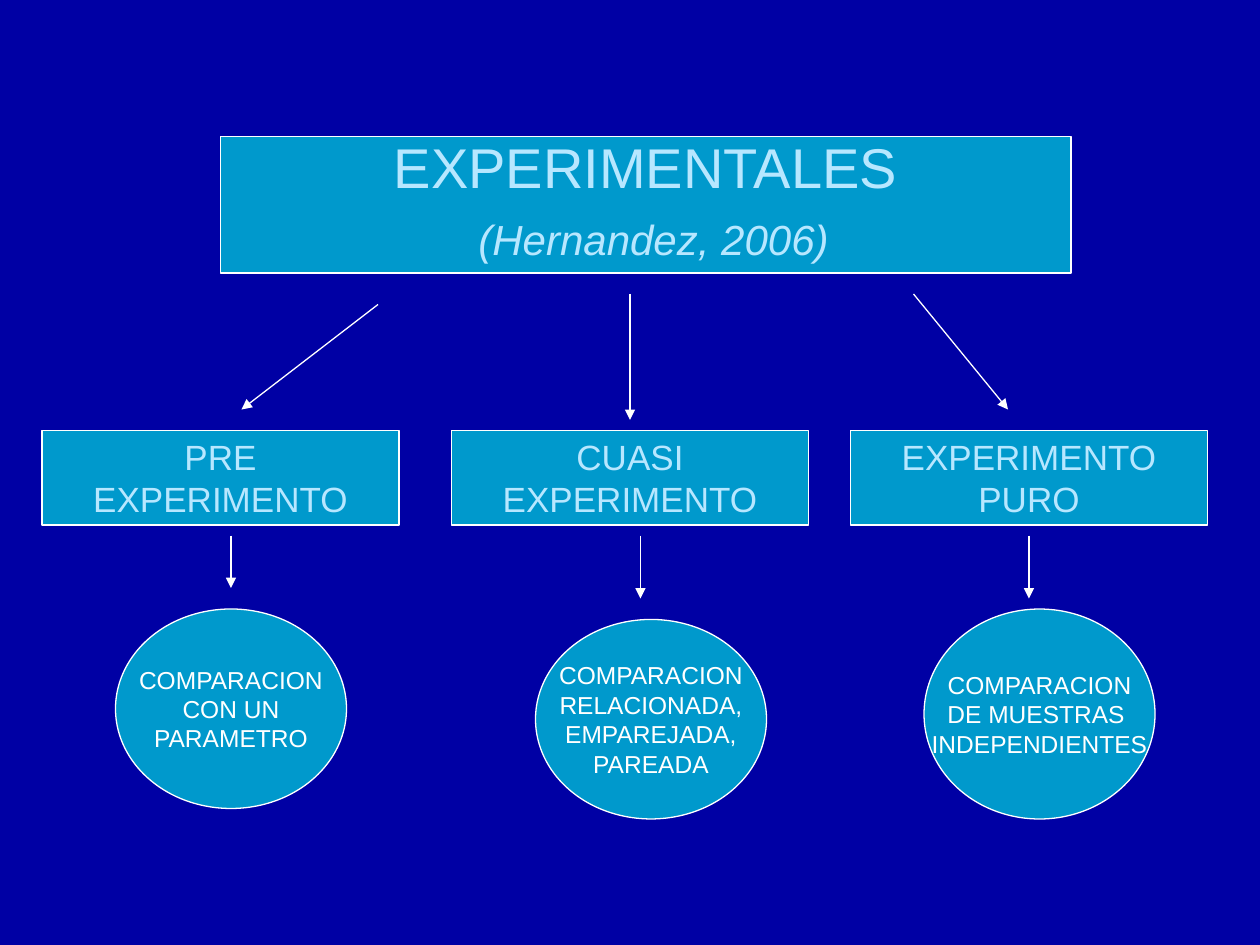
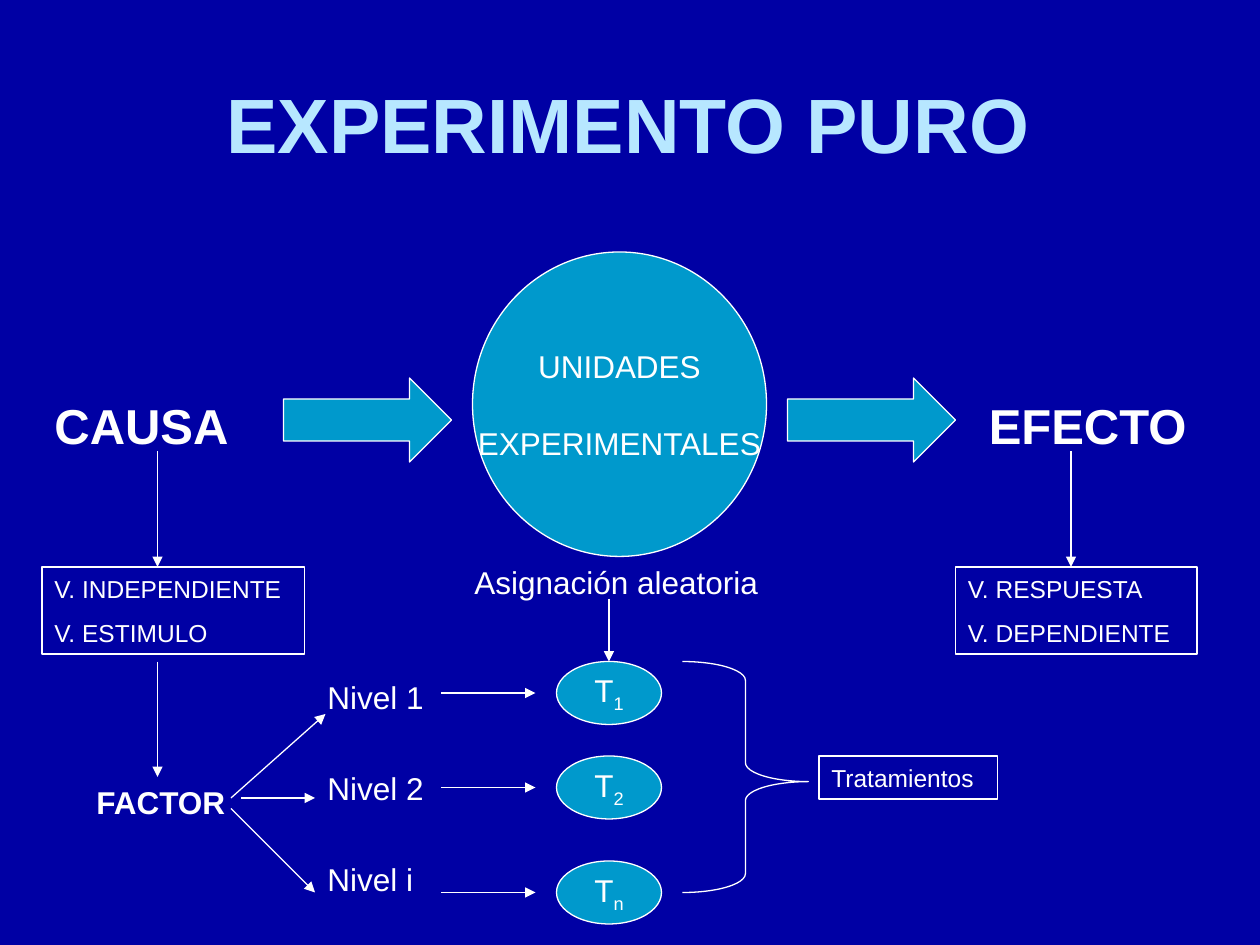
from lxml.etree import SubElement
from pptx import Presentation
from pptx.dml.color import RGBColor
from pptx.enum.shapes import MSO_CONNECTOR, MSO_SHAPE
from pptx.enum.text import MSO_ANCHOR, PP_ALIGN
from pptx.oxml.ns import qn
from pptx.util import Inches, Pt

COLORS = {"back": "0000A4", "fill": "0099CC", "white": "FFFFFF", "title": "B7E7FF"}
COLS, ROWS = 120, 90
WIDTH, HEIGHT = Inches(10), Inches(7.5)
MIDDLE = {"align": PP_ALIGN.CENTER, "anchor": MSO_ANCHOR.MIDDLE}
HEADING = {**MIDDLE, "color": "title"}
BUBBLE = {**MIDDLE, "wrap": False}
LIST = {"size": 14, "gap": 8, "fill": None, "anchor": MSO_ANCHOR.MIDDLE}


class Deck:
    """Draws styled elements on the current slide, placed on a 120 by 90 grid."""

    def __init__(self):
        self.prs = Presentation()
        self.prs.slide_width, self.prs.slide_height = WIDTH, HEIGHT
        self.s = None

    def color(self, name):
        return RGBColor.from_string(COLORS[name])

    def place(self, *at):
        return [int(v * (HEIGHT / ROWS if i % 2 else WIDTH / COLS)) for i, v in enumerate(at)]

    def slide(self):
        self.s = self.prs.slides.add_slide(self.prs.slide_layouts[6])
        fill = self.s.background.fill
        fill.solid()
        fill.fore_color.rgb = self.color("back")

    def outline(self, sp):
        sp.line.color.rgb = self.color("white")
        sp.line.width = Pt(0.75)

    def put_text(self, sp, paras, size=18, color="white", align=PP_ALIGN.LEFT,
                 anchor=MSO_ANCHOR.TOP, wrap=True, gap=0, bold=False):
        tf = sp.text_frame
        tf.word_wrap, tf.vertical_anchor = wrap, anchor
        for i, runs in enumerate(paras):
            p = tf.add_paragraph() if i else tf.paragraphs[0]
            p.alignment, p.space_before = align, Pt(gap if i else 0)
            for text, extra in [(runs, {})] if isinstance(runs, str) else runs:
                self.put_runs(p, text, color,
                              {"name": "Arial", "size": Pt(size), "bold": bold, **extra})

    def put_runs(self, p, text, color, form):
        for i, line in enumerate(text.split("\n")):
            if i:
                p.add_line_break()
            r = p.add_run()
            r.text = line
            r.font.color.rgb = self.color(color)
            for key, value in form.items():
                if key == "baseline":
                    r._r.get_or_add_rPr().set(key, value)
                else:
                    setattr(r.font, key, value)

    def shape(self, kind, at, paras=(), fill="fill", adjust=(), **form):
        sp = self.s.shapes.add_shape(kind, *self.place(*at))
        sp.shadow.inherit = False
        for i, value in enumerate(adjust):
            sp.adjustments[i] = value
        if fill:
            sp.fill.solid()
            sp.fill.fore_color.rgb = self.color(fill)
        else:
            sp.fill.background()
        self.outline(sp)
        if paras:
            self.put_text(sp, paras, **form)

    def text(self, at, paras, **form):
        self.put_text(self.s.shapes.add_textbox(*self.place(*at)), paras, **form)

    def arrow(self, *ends):
        sp = self.s.shapes.add_connector(MSO_CONNECTOR.STRAIGHT, *self.place(*ends))
        self.outline(sp)
        SubElement(sp.line._get_or_add_ln(), qn("a:tailEnd"), type="triangle")
        SubElement(sp._element.spPr, qn("a:effectLst"))


def designs(deck):
    """Draws the tree of experimental designs."""
    deck.slide()
    heading = [("EXPERIMENTALES\n ", {}), ("(Hernandez, 2006)", {"size": Pt(24), "italic": True})]
    deck.shape(MSO_SHAPE.RECTANGLE, (21, 13, 81, 13), [heading], size=32,
               **{**HEADING, "anchor": MSO_ANCHOR.BOTTOM})
    for ends in ((60, 28, 60, 40), (36, 29, 23, 39), (87, 28, 96, 39)):
        deck.arrow(*ends)
    branches = (
        (4, "PRE EXPERIMENTO", 22, 56, (11, 58, 22, 19), "COMPARACION|CON UN|PARAMETRO"),
        (43, "CUASI\nEXPERIMENTO", 61, 57, (51, 59, 22, 19),
         "COMPARACION|RELACIONADA,|EMPAREJADA,|PAREADA"),
        (81, "EXPERIMENTO\nPURO", 98, 57, (88, 58, 22, 20),
         "COMPARACION|DE MUESTRAS |INDEPENDIENTES"),
    )
    for left, name, x, tip, bubble, test in branches:
        deck.shape(MSO_SHAPE.RECTANGLE, (left, 41, 34, 9), [name], size=20, **HEADING)
        deck.arrow(x, 51, x, tip)
        deck.shape(MSO_SHAPE.OVAL, bubble, test.split("|"), size=14, **BUBBLE)


def pure_experiment(deck):
    """Draws the cause and effect scheme with its treatments."""
    deck.slide()
    deck.text((4, 3, 111.7, 17.4), ["EXPERIMENTO PURO"], size=44, bold=True, **HEADING)
    deck.shape(MSO_SHAPE.OVAL, (45, 24, 28, 29), ["UNIDADES", "EXPERIMENTALES"], gap=22.5, **BUBBLE)
    for left in (27, 75):
        deck.shape(MSO_SHAPE.RIGHT_ARROW, (left, 36, 16, 8))
    sides = (
        (4, 21, "CAUSA", 15, 4, 25, ["V. INDEPENDIENTE", "V. ESTIMULO"]),
        (93, 25, "EFECTO", 102, 91, 23, ["V. RESPUESTA", "V. DEPENDIENTE"]),
    )
    for left, width, name, x, box, box_width, variables in sides:
        deck.text((left, 37, width, 6.9), [name], size=28, bold=True, anchor=MSO_ANCHOR.MIDDLE)
        deck.arrow(x, 43, x, 54)
        deck.shape(MSO_SHAPE.RECTANGLE, (box, 54, box_width, 8.3), variables, **LIST)
    deck.text((8, 74, 17, 4.8), ["FACTOR"], bold=True)
    deck.text((44, 53, 31, 4.8), ["Asignación aleatoria"])
    deck.text((30, 64, 20, 22.8), ["Nivel 1", "Nivel 2", "Nivel i"], gap=30.4)
    for ends in ((15, 63, 15, 74), (23, 76, 30, 76), (22, 76, 31, 68), (22, 77, 30, 85),
                 (58, 57, 58, 63)):
        deck.arrow(*ends)
    for top, index in ((63, "1"), (72, "2"), (82, "n")):
        label = [("T", {}), (index, {"baseline": "-25000"})]
        deck.shape(MSO_SHAPE.OVAL, (53, top, 10, 6), [label], **BUBBLE)
        deck.arrow(42, top + 3, 51, top + 3)
    deck.shape(MSO_SHAPE.RIGHT_BRACE, (65, 63, 12, 22), fill=None, adjust=(0.15, 0.52))
    deck.shape(MSO_SHAPE.RECTANGLE, (78, 72, 17, 4.1), ["Tratamientos"], **LIST)


def main():
    """Builds and saves both slides."""
    deck = Deck()
    designs(deck)
    pure_experiment(deck)
    deck.prs.save("out.pptx")


if __name__ == "__main__":
    main()
